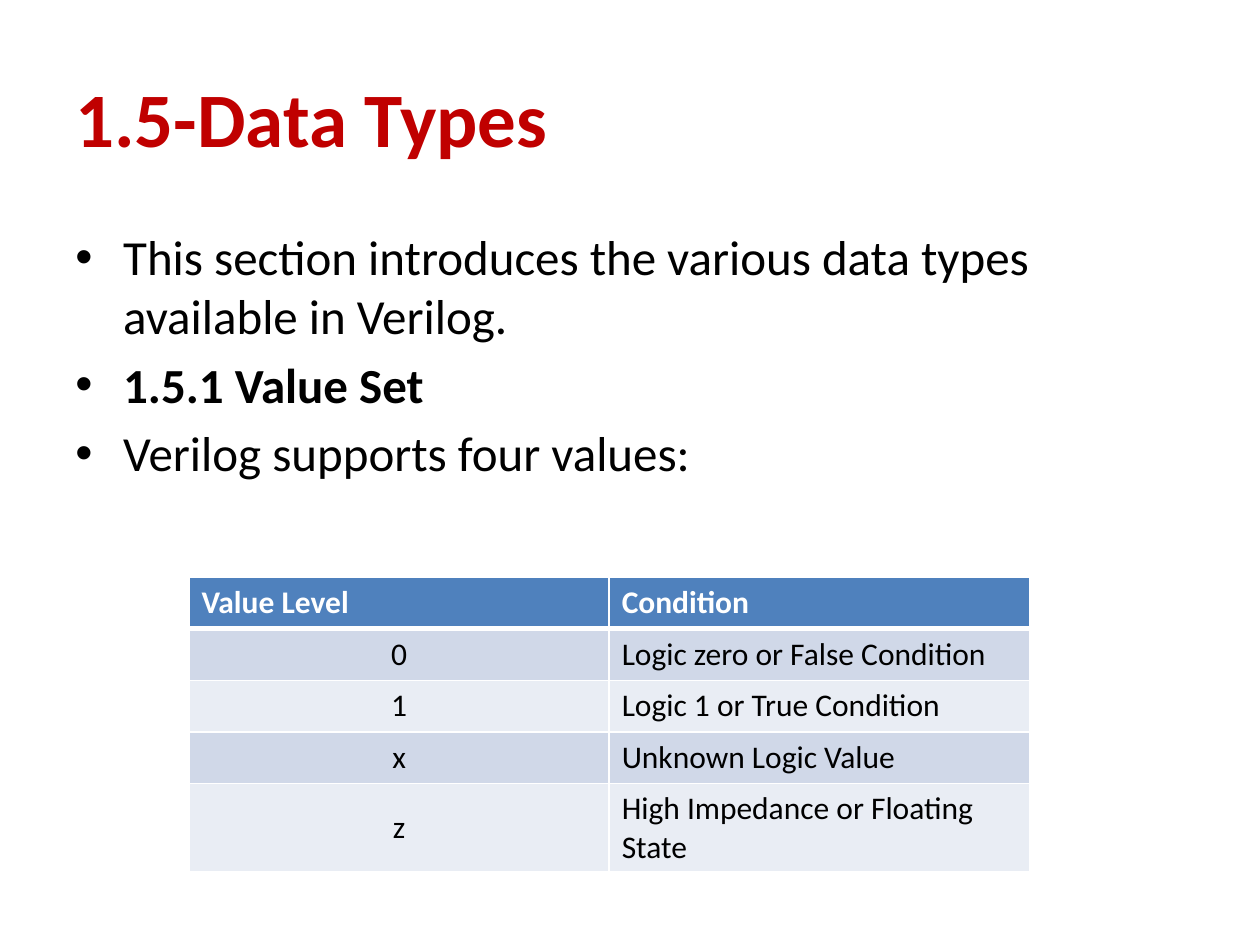
"""Build the Verilog data types slide."""
from lxml import etree
from pptx import Presentation
from pptx import util as u
from pptx.dml.color import RGBColor
from pptx.enum import text
from pptx.oxml.ns import qn

RED = RGBColor(0xC0, 0x00, 0x00)
BLACK = RGBColor(0x00, 0x00, 0x00)
WHITE = RGBColor(0xFF, 0xFF, 0xFF)
BLUE = RGBColor(0x4F, 0x81, 0xBD)
BANDS = [RGBColor(0xE9, 0xED, 0xF4), RGBColor(0xD0, 0xD8, 0xE8)]

BULLETS = [
    ("This section introduces the various data types available in Verilog.", False),
    ("1.5.1 Value Set", True),
    ("Verilog supports four values:", False),
]
ROWS = [
    ("Value Level", "Condition"),
    ("0", "Logic zero or False Condition"),
    ("1", "Logic 1 or True Condition"),
    ("x", "Unknown Logic Value"),
    ("z", "High Impedance or Floating State"),
]


def add_run(p, content, size, color, bold):
    r = p.add_run()
    r.text = content
    r.font.name = "Calibri"
    r.font.size = u.Pt(size)
    r.font.bold = bold
    r.font.color.rgb = color


def add_border(cell, side, width):
    ln = etree.SubElement(cell._tc.get_or_add_tcPr(), qn("a:" + side), w=str(u.Pt(width)))
    fill = etree.SubElement(ln, qn("a:solidFill"))
    etree.SubElement(fill, qn("a:srgbClr"), val=str(WHITE))


prs = Presentation()
prs.slide_width, prs.slide_height = u.Inches(10), u.Inches(7.5)
s = prs.slides.add_slide(prs.slide_layouts[6])

title = s.shapes.add_textbox(u.Inches(0.5), u.Inches(0.3), u.Inches(9), u.Inches(1.25))
tf = title.text_frame
tf.word_wrap = True
tf.vertical_anchor = text.MSO_ANCHOR.MIDDLE
add_run(tf.paragraphs[0], "1.5-Data Types", 44, RED, True)

body = s.shapes.add_textbox(u.Inches(0.5), u.Inches(1.75), u.Inches(9), u.Inches(4.95))
tf = body.text_frame
tf.word_wrap = True
for i, (content, bold) in enumerate(BULLETS):
    p = tf.add_paragraph() if i else tf.paragraphs[0]
    p.space_before = u.Pt(5.6)
    pPr = p._p.get_or_add_pPr()
    pPr.set("marL", str(u.Inches(0.38)))
    pPr.set("indent", str(u.Inches(-0.38)))
    etree.SubElement(pPr, qn("a:buFont"), typeface="Arial")
    etree.SubElement(pPr, qn("a:buChar"), char="•")
    add_run(p, content, 28, BLACK, bold)

frame = s.shapes.add_table(len(ROWS), 2, u.Inches(1.5), u.Inches(4.58),
                           u.Inches(6.67), u.Inches(0.41 * len(ROWS)))
table = frame.table
for i, values in enumerate(ROWS):
    table.rows[i].height = u.Inches(0.41)
    header = i == 0
    for j, value in enumerate(values):
        cell = table.cell(i, j)
        cell.vertical_anchor = text.MSO_ANCHOR.MIDDLE
        for side in ("lnL", "lnR", "lnT", "lnB"):
            thick = (header and side == "lnB") or (i == 1 and side == "lnT")
            add_border(cell, side, 3 if thick else 1)
        cell.fill.solid()
        cell.fill.fore_color.rgb = BLUE if header else BANDS[i % 2]
        p = cell.text_frame.paragraphs[0]
        if j == 0 and not header:
            p.alignment = text.PP_ALIGN.CENTER
        add_run(p, value, 18, WHITE if header else BLACK, header)

prs.save("out.pptx")
